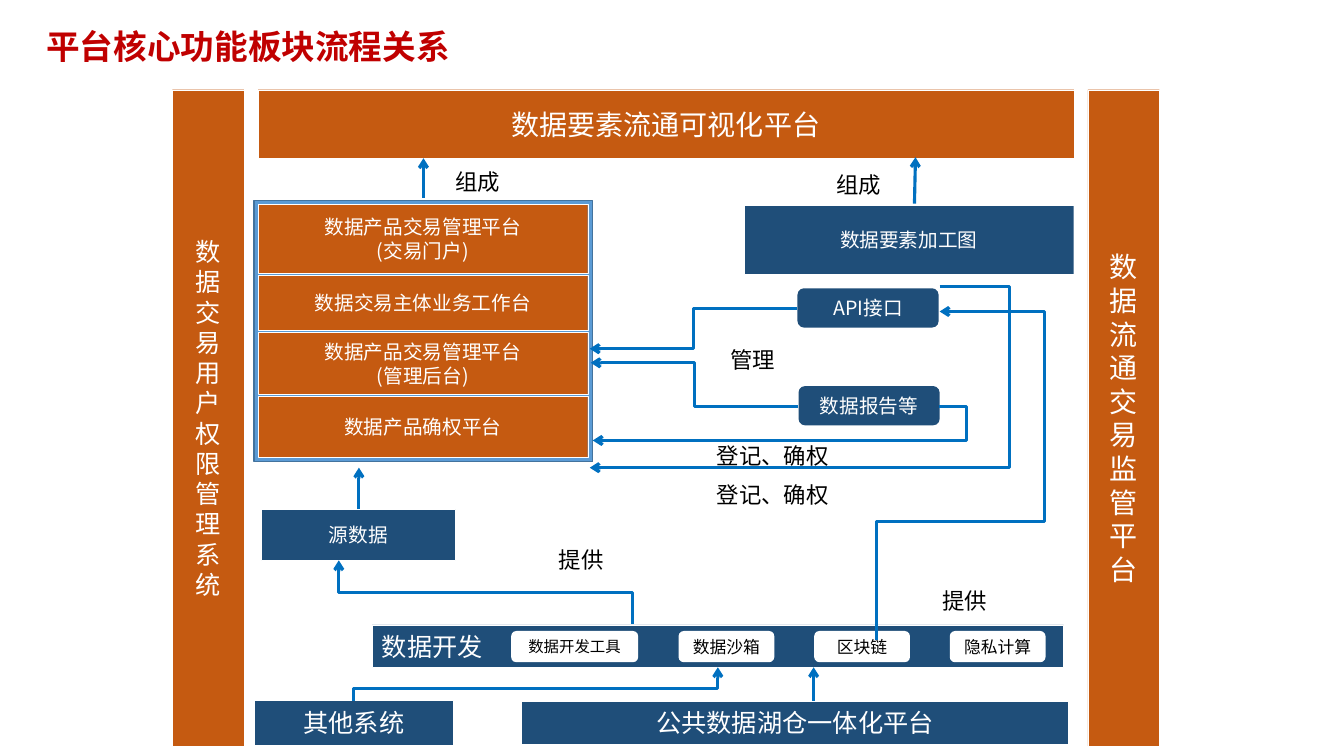
import dataclasses

import lxml.etree
import pptx
import pptx.dml.color
import pptx.enum.shapes
import pptx.enum.text
import pptx.oxml.ns
import pptx.util

Inches = pptx.util.Inches
Shapes = pptx.enum.shapes.MSO_SHAPE
Connectors = pptx.enum.shapes.MSO_CONNECTOR
Align = pptx.enum.text.PP_ALIGN
qn = pptx.oxml.ns.qn


@dataclasses.dataclass(frozen=True)
class Theme:
    font: str = "Noto Sans CJK SC"
    red: str = "C00000"
    orange: str = "C55A11"
    navy: str = "1F4E79"
    frame: str = "5B9BD5"
    frame_line: str = "43739E"
    arrow: str = "0070C0"
    white: str = "FFFFFF"
    black: str = "000000"
    title: int = 24
    banner: int = 20
    platform: int = 18
    label: int = 16
    box: int = 14
    chip: int = 12
    small_chip: int = 11


theme = Theme()

TITLE = "平台核心功能板块流程关系"
FRAME = (2.52, 1.99, 3.36, 2.59)
STACK_LEFT, STACK_TOP, STACK_WIDTH, STACK_GAP = 2.56, 2.03, 3.27, 0.02
STACK = [
    ("数据产品交易管理平台\n(交易门户)", 0.68),
    ("数据交易主体业务工作台", 0.55),
    ("数据产品交易管理平台\n(管理后台)", 0.61),
    ("数据产品确权平台", 0.61),
]
PILLAR_TOP, PILLAR_WIDTH, PILLAR_HEIGHT = 0.89, 0.71, 6.51
PILLARS = [
    ("数据交易用户权限管理系统", 1.71, theme.platform),
    ("数据流通交易监管平台", 10.79, theme.banner),
]
BANNER = ("数据要素流通可视化平台", (2.56, 0.89, 8.09, 0.68))
NAVY_BOXES = [
    ("源数据", (2.59, 5.05, 1.93, 0.51), theme.box),
    ("数据要素加工图", (7.38, 2.04, 3.27, 0.68), theme.box),
    ("其他系统", (2.52, 6.95, 1.98, 0.44), theme.platform),
    ("公共数据湖仓一体化平台", (5.17, 6.96, 5.43, 0.42), theme.platform),
]
DEVELOPMENT = ("数据开发", (3.69, 6.2, 6.86, 0.42))
OUTPUTS = [("API接口", (7.91, 2.86, 1.4, 0.39)), ("数据报告等", (7.92, 3.83, 1.4, 0.39))]
CHIP_TOP, CHIP_HEIGHT = 6.26, 0.31
WIDE_CHIP = ("数据开发工具", 5.07, 1.26)
CHIP_LEFT, CHIP_WIDTH, CHIP_PITCH = 6.73, 0.95, 1.345
CHIPS = ["数据沙箱", "区块链", "隐私计算"]
LABELS = [
    ("组成", (4.27, 1.63, 0.93, 0.35)),
    ("组成", (8.05, 1.64, 0.93, 0.38)),
    ("管理", (7, 3.38, 0.93, 0.38)),
    ("登记、确权", (7, 4.33, 1.33, 0.38)),
    ("登记、确权", (6.91, 4.71, 1.51, 0.4)),
    ("提供", (5.28, 5.39, 0.97, 0.32)),
    ("提供", (9.08, 5.8, 0.97, 0.32)),
]
STRAIGHT_ARROWS = [
    ((3.56, 5.05), (3.56, 4.64)),
    ((4.2, 1.96), (4.2, 1.57)),
    ((9.07, 2.02), (9.08, 1.56)),
    ((8.07, 6.95), (8.07, 6.62)),
]
SIDEWAYS_ELBOWS = [
    ((7.91, 3.06), (5.85, 3.46), [0.5]),
    ((7.92, 4.03), (5.86, 3.6), [0.5]),
    ((9.32, 2.84), (5.85, 4.64), [-0.2]),
    ((9.31, 4.03), (5.88, 4.37), [-0.08]),
]
UPWARD_ELBOWS = [
    ((8.69, 6.35), (9.32, 3.09), [0.36, 2.65]),
    ((3.51, 6.95), (7.12, 6.62), [0.37]),
    ((6.27, 6.19), (3.36, 5.56), [0.5]),
]


def rgb(color):
    return pptx.dml.color.RGBColor.from_string(color)


def write(shape, text, size, color, align=Align.CENTER, bold=False):
    frame = shape.text_frame
    frame.text = text
    frame.word_wrap = True
    frame.vertical_anchor = pptx.enum.text.MSO_ANCHOR.MIDDLE
    for paragraph in frame.paragraphs:
        paragraph.alignment = align
        font = paragraph.font
        font.size, font.bold, font.name = pptx.util.Pt(size), bold, theme.font
        font.color.rgb = rgb(color)
        lxml.etree.SubElement(font._rPr, qn("a:ea"), typeface=theme.font)


def add_box(slide, place, fill, line=theme.white, line_width=0.25, kind=Shapes.RECTANGLE):
    shape = slide.shapes.add_shape(kind, *map(Inches, place))
    shape.shadow.inherit = False
    shape.fill.solid()
    shape.fill.fore_color.rgb = rgb(fill)
    if line:
        shape.line.color.rgb = rgb(line)
        shape.line.width = pptx.util.Pt(line_width)
    else:
        shape.line.fill.background()
    return shape


def add_pill(slide, text, place, fill, color, size):
    shape = add_box(slide, place, fill, line=None, kind=Shapes.ROUNDED_RECTANGLE)
    write(shape, text, size, color)


def add_arrow(slide, start, end, kind=Connectors.STRAIGHT):
    connector = slide.shapes.add_connector(kind, *map(Inches, start + end))
    connector.line.color.rgb = rgb(theme.arrow)
    connector.line.width = pptx.util.Pt(2.25)
    properties = connector._element.spPr
    lxml.etree.SubElement(connector.line._get_or_add_ln(), qn("a:tailEnd"), type="arrow")
    lxml.etree.SubElement(properties, qn("a:effectLst"))
    return properties


def add_elbow(slide, start, end, bends, upward=False):
    if upward:
        middle_x, middle_y = (start[0] + end[0]) / 2, (start[1] + end[1]) / 2
        half_x, half_y = (start[1] - end[1]) / 2, (end[0] - start[0]) / 2
        start = (middle_x - half_x, middle_y - half_y)
        end = (middle_x + half_x, middle_y + half_y)
    properties = add_arrow(slide, start, end, Connectors.ELBOW)
    if upward:
        properties.find(qn("a:xfrm")).set("rot", str(270 * 60000))
    geometry = properties.find(qn("a:prstGeom"))
    geometry.set("prst", f"bentConnector{len(bends) + 2}")
    guides = geometry.find(qn("a:avLst"))
    for number, bend in enumerate(bends, 1):
        lxml.etree.SubElement(
            guides, qn("a:gd"), name=f"adj{number}", fmla=f"val {round(bend * 100000)}")


def main():
    presentation = pptx.Presentation()
    presentation.slide_width, presentation.slide_height = Inches(13.33), Inches(7.5)
    slide = presentation.slides.add_slide(presentation.slide_layouts[5])

    title = slide.shapes.title
    title.left, title.top, title.width, title.height = map(Inches, (0.36, 0.23, 10.94, 0.46))
    write(title, TITLE, theme.title, theme.red, Align.LEFT, bold=True)

    add_box(slide, FRAME, theme.frame, theme.frame_line, 1)
    top = STACK_TOP
    for text, height in STACK:
        row = add_box(slide, (STACK_LEFT, top, STACK_WIDTH, height), theme.orange)
        write(row, text, theme.box, theme.white)
        top += height + STACK_GAP

    for text, left, size in PILLARS:
        pillar = add_box(slide, (left, PILLAR_TOP, PILLAR_WIDTH, PILLAR_HEIGHT), theme.orange)
        write(pillar, "\n".join(text), size, theme.white)

    text, place = BANNER
    write(add_box(slide, place, theme.orange), text, theme.banner, theme.white)
    for text, place, size in NAVY_BOXES:
        write(add_box(slide, place, theme.navy), text, size, theme.white)
    text, place = DEVELOPMENT
    write(add_box(slide, place, theme.navy), text, theme.platform, theme.white, Align.LEFT)

    for text, place in OUTPUTS:
        add_pill(slide, text, place, theme.navy, theme.white, theme.box)
    text, left, width = WIDE_CHIP
    add_pill(slide, text, (left, CHIP_TOP, width, CHIP_HEIGHT),
             theme.white, theme.black, theme.small_chip)
    for index, text in enumerate(CHIPS):
        place = (CHIP_LEFT + index * CHIP_PITCH, CHIP_TOP, CHIP_WIDTH, CHIP_HEIGHT)
        add_pill(slide, text, place, theme.white, theme.black, theme.chip)

    for start, end in STRAIGHT_ARROWS:
        add_arrow(slide, start, end)
    for start, end, bends in SIDEWAYS_ELBOWS:
        add_elbow(slide, start, end, bends)
    for start, end, bends in UPWARD_ELBOWS:
        add_elbow(slide, start, end, bends, upward=True)

    for text, place in LABELS:
        label = slide.shapes.add_textbox(*map(Inches, place))
        write(label, text, theme.label, theme.black)
        label.text_frame.margin_left = label.text_frame.margin_right = 0

    presentation.save("out.pptx")


if __name__ == "__main__":
    main()
